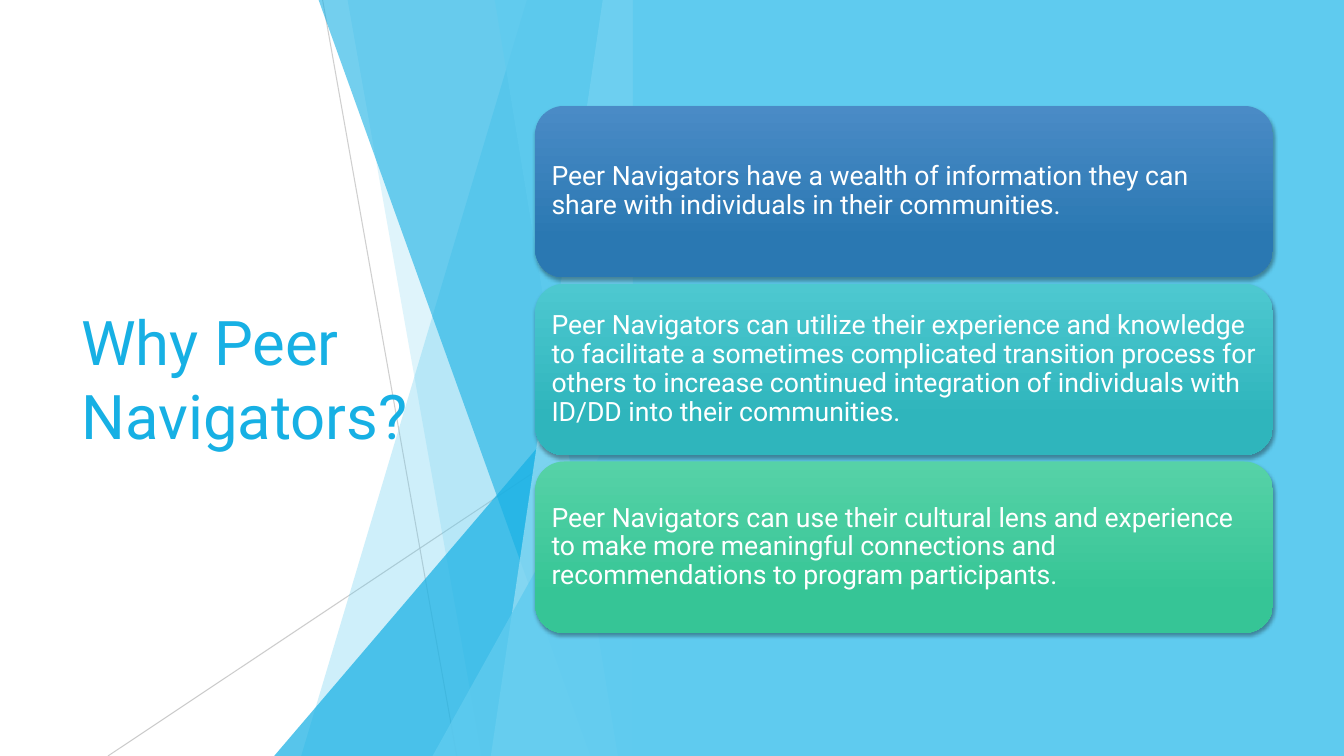
import lxml.etree
import pptx
import pptx.dml.color
import pptx.enum.shapes
import pptx.enum.text
import pptx.oxml.ns
import pptx.util

Cm = pptx.util.Cm
Pt = pptx.util.Pt
RGBColor = pptx.dml.color.RGBColor
SHAPE = pptx.enum.shapes.MSO_SHAPE
qn = pptx.oxml.ns.qn

SKY = RGBColor(0x5F, 0xCB, 0xEF)
AZURE = RGBColor(0x17, 0xB0, 0xE4)
ICE = RGBColor(0x9F, 0xE0, 0xF5)
GREY = RGBColor(0xBF, 0xBF, 0xBF)
WHITE = RGBColor(0xFF, 0xFF, 0xFF)
BLUE_TOP = RGBColor(0x4A, 0x8B, 0xC6)
BLUE_BASE = RGBColor(0x2A, 0x78, 0xB2)
TEAL_TOP = RGBColor(0x4D, 0xC8, 0xD0)
TEAL_BASE = RGBColor(0x2F, 0xB5, 0xBC)
GREEN_TOP = RGBColor(0x56, 0xD2, 0xA7)
GREEN_BASE = RGBColor(0x36, 0xC5, 0x96)


def set_alpha(element, percent):
    color = next(element.iter(qn("a:srgbClr")))
    lxml.etree.SubElement(color, qn("a:alpha")).set("val", str(percent * 1000))


def write_text(shape, text, size, color, frame_format):
    frame = shape.text_frame
    for name, value in frame_format.items():
        setattr(frame, name, value)
    paragraph = frame.paragraphs[0]
    paragraph.alignment = pptx.enum.text.PP_ALIGN.LEFT
    run = paragraph.add_run()
    run.text = text
    run.font.name = "Roboto"
    run.font.size = Pt(size)
    run.font.color.rgb = color
    return paragraph


presentation = pptx.Presentation()
presentation.slide_width = Cm(33.87)
presentation.slide_height = Cm(19.05)
slide = presentation.slides.add_slide(presentation.slide_layouts[6])
shapes = slide.shapes

panel_left = 15.95
bottom = 19.05

rays = [
    ((8.13, 0), (11.51, bottom), 75),
    ((panel_left, 10.24), (2.72, bottom), 80),
]
for start, end, opacity in rays:
    ray = shapes.add_connector(
        pptx.enum.shapes.MSO_CONNECTOR.STRAIGHT, *map(Cm, start + end)
    )
    ray.line.color.rgb = GREY
    ray.line.width = Pt(0.75)
    properties = ray.element.spPr
    set_alpha(properties, opacity)
    lxml.etree.SubElement(properties, qn("a:effectLst"))

facets = [
    ("band", 13.28, 7.59, SKY, 30),
    ("band", 8.76, 12.14, SKY, 20),
    ("triangle", 6.91, 8.46, AZURE, 72),
    ("band", 8.03, 14.88, AZURE, 60),
    ("band", 15.19, 12.37, ICE, 70),
    ("band", 12.47, 15.57, SKY, 65),
    ("triangle", 10.9, 9.98, SKY, 80),
]
for outline, first, second, color, opacity in facets:
    if outline == "triangle":
        facet = shapes.add_shape(
            SHAPE.ISOSCELES_TRIANGLE,
            Cm(first), Cm(second), Cm(panel_left - first), Cm(bottom - second),
        )
        facet.adjustments[0] = 1
    else:
        corners = [(panel_left, 0), (panel_left, bottom), (second, bottom)]
        builder = shapes.build_freeform(Cm(first), Cm(0))
        builder.add_line_segments([(Cm(x), Cm(y)) for x, y in corners])
        facet = builder.convert_to_shape()
    facet.shadow.inherit = False
    facet.line.fill.background()
    facet.fill.solid()
    facet.fill.fore_color.rgb = color
    set_alpha(facet.element.spPr, opacity)

title = shapes.add_textbox(Cm(1.8), Cm(3.84), Cm(9.86), Cm(11.38))
title_format = {
    "word_wrap": True,
    "vertical_anchor": pptx.enum.text.MSO_ANCHOR.MIDDLE,
}
write_text(title, "Why Peer Navigators?", 44, AZURE, title_format)

panel = shapes.add_shape(
    SHAPE.RECTANGLE, Cm(panel_left), Cm(0), Cm(33.87 - panel_left), Cm(bottom)
)
panel.shadow.inherit = False
panel.line.fill.background()
panel.fill.solid()
panel.fill.fore_color.rgb = SKY

reasons = [
    ("Peer Navigators have a wealth of information they can share with "
     "individuals in their communities.", BLUE_TOP, BLUE_BASE),
    ("Peer Navigators can utilize their experience and knowledge to facilitate "
     "a sometimes complicated transition process for others to increase "
     "continued integration of individuals with ID/DD into their communities.",
     TEAL_TOP, TEAL_BASE),
    ("Peer Navigators can use their cultural lens and experience to make more "
     "meaningful connections and recommendations to program participants.",
     GREEN_TOP, GREEN_BASE),
]
margins = ("margin_left", "margin_top", "margin_right", "margin_bottom")
card_format = {**title_format, **dict.fromkeys(margins, Cm(0.2))}
shadow_format = {
    "blurRad": Pt(3), "dist": Pt(2), "dir": 90 * 60000, "rotWithShape": 0,
}
for index, (reason, top_color, base_color) in enumerate(reasons):
    card = shapes.add_shape(
        SHAPE.ROUNDED_RECTANGLE,
        Cm(13.49), Cm(2.67 + index * 4.48), Cm(18.59), Cm(4.32),
    )
    card.line.fill.background()
    card.fill.gradient()
    card.fill.gradient_angle = 270
    stops = zip(card.fill.gradient_stops, (0, 0.78), (top_color, base_color))
    for stop, position, color in stops:
        stop.position = position
        stop.color.rgb = color
    card.shadow.inherit = False
    effects = card.element.spPr.find(qn("a:effectLst"))
    shadow = lxml.etree.SubElement(effects, qn("a:outerShdw"))
    for name, value in shadow_format.items():
        shadow.set(name, str(value))
    lxml.etree.SubElement(shadow, qn("a:srgbClr")).set("val", "000000")
    set_alpha(shadow, 35)
    write_text(card, reason, 19, WHITE, card_format).line_spacing = 0.9

presentation.save("out.pptx")
